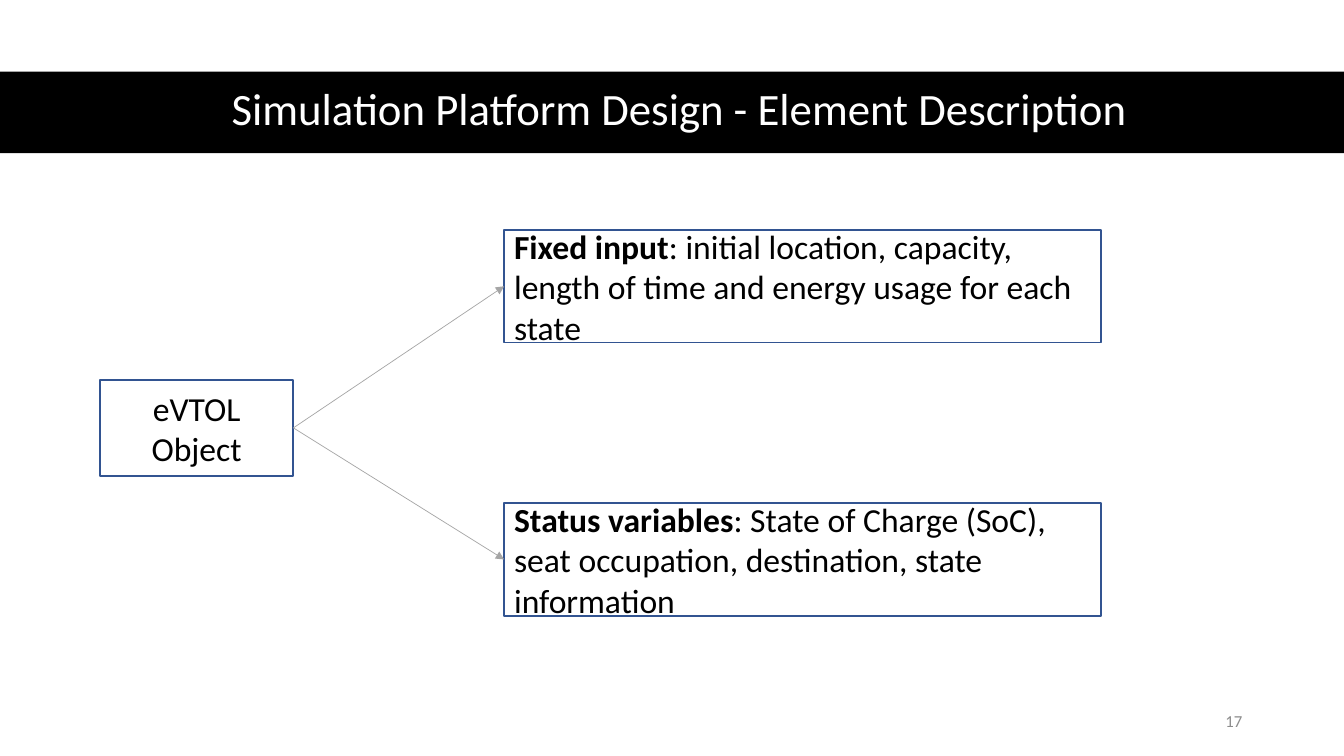
import pptx
import pptx.util
import pptx.dml.color
import pptx.enum.shapes
import pptx.enum.text
import pptx.oxml
import pptx.oxml.ns

Inches = pptx.util.Inches
Pt = pptx.util.Pt
RGBColor = pptx.dml.color.RGBColor
Align = pptx.enum.text.PP_ALIGN
Anchor = pptx.enum.text.MSO_ANCHOR

BLACK = RGBColor(0x00, 0x00, 0x00)
WHITE = RGBColor(0xFF, 0xFF, 0xFF)
BLUE = RGBColor(0x32, 0x54, 0x91)
GRAY = RGBColor(0xA5, 0xA5, 0xA5)
DIM = RGBColor(0x8C, 0x8C, 0x8C)


def write(shape, text, lead="", size=24, color=BLACK, align=Align.LEFT, space=None):
    """Fill the shape with an optional bold lead followed by text."""
    frame = shape.text_frame
    frame.word_wrap = True
    frame.vertical_anchor = Anchor.MIDDLE
    para = frame.paragraphs[0]
    para.alignment = align
    para.line_spacing = space
    for part, bold in ((lead, True), (text, False)):
        if part:
            run = para.add_run()
            run.text = part
            run.font.name = "Calibri"
            run.font.size = Pt(size)
            run.font.bold = bold
            run.font.color.rgb = color


class Page:
    def __init__(self, slide):
        self.shapes = slide.shapes

    def box(self, left, top, width, height, fill=None, line=None, weight=1):
        kind = pptx.enum.shapes.MSO_SHAPE.RECTANGLE
        rect = self.shapes.add_shape(
            kind, Inches(left), Inches(top), Inches(width), Inches(height))
        rect.shadow.inherit = False
        if fill is None:
            rect.fill.background()
        else:
            rect.fill.solid()
            rect.fill.fore_color.rgb = fill
        if line is None:
            rect.line.fill.background()
        else:
            rect.line.color.rgb = line
            rect.line.width = Pt(weight)
        return rect

    def label(self, text, left, top, width, height, **style):
        area = self.shapes.add_textbox(
            Inches(left), Inches(top), Inches(width), Inches(height))
        write(area, text, **style)

    def arrow(self, start, end):
        """Join the right side of start to the left side of end."""
        link = self.shapes.add_connector(
            pptx.enum.shapes.MSO_CONNECTOR.STRAIGHT, 0, 0, 0, 0)
        link.begin_connect(start, 3)
        link.end_connect(end, 1)
        link.line.color.rgb = GRAY
        link.line.width = Pt(0.5)
        tip = pptx.oxml.parse_xml(
            "<a:tailEnd %s type='triangle'/>" % pptx.oxml.ns.nsdecls("a"))
        link.line._get_or_add_ln().append(tip)
        link._element.spPr.append(pptx.oxml.parse_xml(
            "<a:effectLst %s/>" % pptx.oxml.ns.nsdecls("a")))


def main():
    deck = pptx.Presentation()
    deck.slide_width = Inches(13.33)
    deck.slide_height = Inches(7.5)
    page = Page(deck.slides.add_slide(deck.slide_layouts[6]))

    page.box(0, 0.71, 13.33, 0.81, fill=BLACK)
    page.label("Simulation Platform Design - Element Description",
               0.61, 0.7, 12.26, 0.81,
               size=32, color=WHITE, align=Align.CENTER, space=0.9)

    craft = page.box(0.99, 3.77, 1.92, 0.95, line=BLUE, weight=1.5)
    write(craft, "eVTOL Object", align=Align.CENTER)

    groups = (
        (2.28, "Fixed input",
         ": initial location, capacity, length of time and energy usage for each state"),
        (4.99, "Status variables",
         ": State of Charge (SoC), seat occupation, destination, state information"),
    )
    for top, lead, text in groups:
        group = page.box(5, top, 5.92, 1.12, line=BLUE)
        write(group, text, lead=lead)
        page.arrow(craft, group)

    page.label("17", 9.42, 6.95, 3, 0.4, size=12, color=DIM, align=Align.RIGHT)
    deck.save("out.pptx")


if __name__ == "__main__":
    main()
